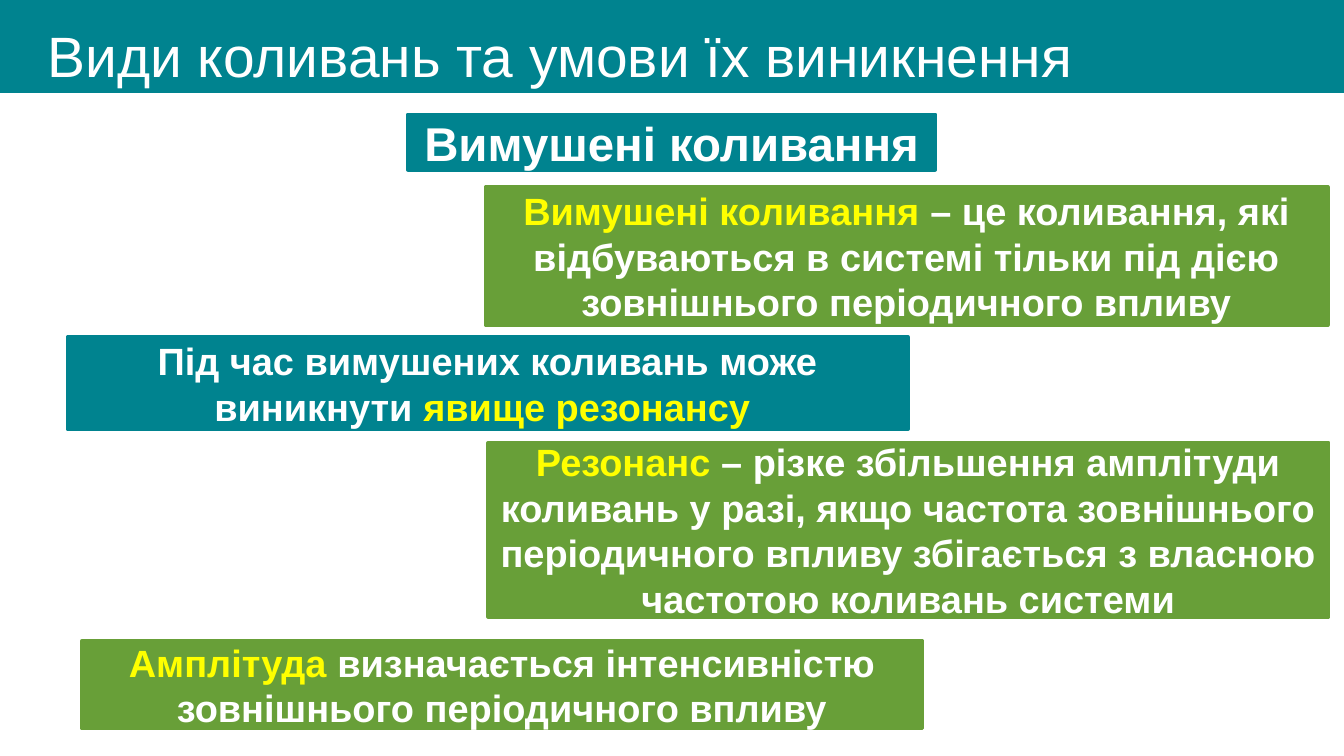
import pptx
import pptx.util
import pptx.dml.color
import pptx.enum.shapes
import pptx.enum.text

PX = 9144  # EMU in one px, 100 px to the inch
FONT = "Arial"
COLORS = {
    "teal": "00838F",
    "green": "689F38",
    "white": "FFFFFF",
    "yellow": "FFFF00",
}


def color(name):
    return pptx.dml.color.RGBColor.from_string(COLORS[name])


def place(*box):
    return [pptx.util.Emu(n * PX) for n in box]


def write(shape, parts, size, bold=True):
    """Fill the first paragraph with (text, color) parts."""
    frame = shape.text_frame
    frame.word_wrap = True
    frame.vertical_anchor = pptx.enum.text.MSO_ANCHOR.MIDDLE
    para = frame.paragraphs[0]
    for text, tint in parts:
        run = para.add_run()
        run.text = text
        run.font.name = FONT
        run.font.size = pptx.util.Pt(size)
        run.font.bold = bold
        run.font.color.rgb = color(tint)
    return para


def add_bar(slide, box, fill, line=3):
    kind = pptx.enum.shapes.MSO_SHAPE.RECTANGLE
    bar = slide.shapes.add_shape(kind, *place(*box))
    bar.shadow.inherit = False
    bar.fill.solid()
    bar.fill.fore_color.rgb = color(fill)
    bar.line.color.rgb = color(fill)
    bar.line.width = pptx.util.Pt(line)
    return bar


def add_card(slide, box, fill, parts, size=32):
    para = write(add_bar(slide, box, fill), parts, size)
    para.alignment = pptx.enum.text.PP_ALIGN.CENTER


def add_title(slide, box, text):
    title = slide.shapes.add_textbox(*place(*box))
    para = write(title, [(text, "white")], 48, bold=False)
    para.line_spacing = 0.9


def main():
    deck = pptx.Presentation()
    deck.slide_width, deck.slide_height = place(1575, 886)
    slide = deck.slides.add_slide(deck.slide_layouts[6])

    # Header band and title
    add_bar(slide, (0, 0, 1575, 108), "teal", line=1)
    add_title(slide, (46, 30, 1358, 78), "Види коливань та умови їх виникнення")

    # Topic
    add_card(slide, (478, 134, 618, 65), "teal",
             [("Вимушені коливання", "white")], size=40)

    # Definitions and facts, top to bottom
    add_card(slide, (569, 219, 987, 162), "green", [
        ("Вимушені коливання ", "yellow"),
        ("– це коливання, які відбуваються в системі тільки під дією "
         "зовнішнього періодичного впливу", "white")])
    add_card(slide, (79, 395, 985, 108), "teal", [
        ("Під час вимушених коливань може виникнути ", "white"),
        ("явище резонансу ", "yellow")])
    add_card(slide, (572, 519, 985, 204), "green", [
        ("Резонанс ", "yellow"),
        ("– різке збільшення амплітуди коливань у разі, якщо частота "
         "зовнішнього періодичного впливу збігається з власною частотою "
         "коливань системи", "white")])
    add_card(slide, (96, 751, 985, 103), "green", [
        ("Амплітуда", "yellow"),
        (" визначається інтенсивністю зовнішнього періодичного впливу",
         "white")])

    deck.save("out.pptx")


if __name__ == "__main__":
    main()
